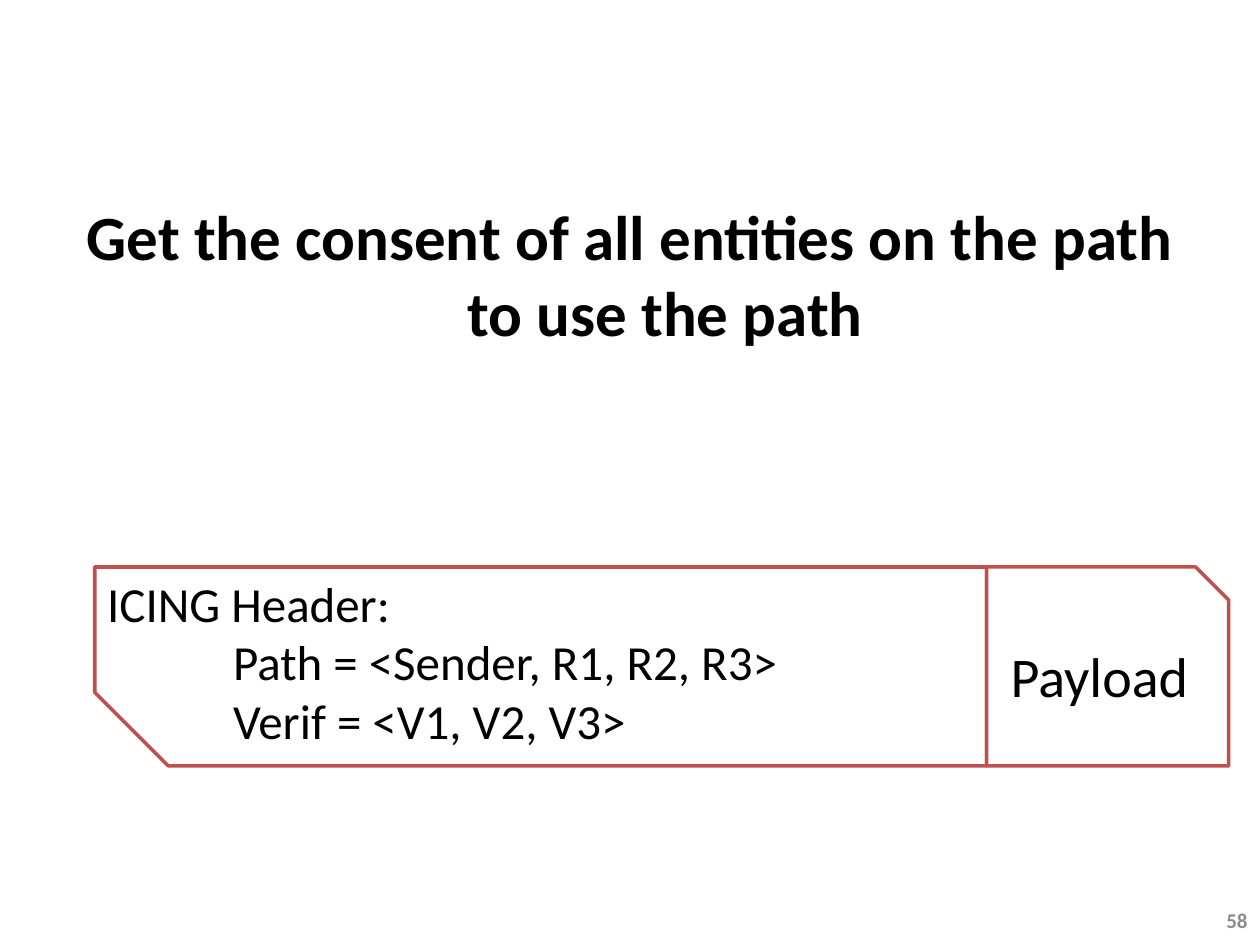
from dataclasses import dataclass

from pptx import Presentation
from pptx.dml.color import RGBColor
from pptx.enum.shapes import MSO_SHAPE
from pptx.enum.text import MSO_ANCHOR, MSO_AUTO_SIZE, PP_ALIGN
from pptx.util import Cm, Pt


@dataclass(frozen=True)
class Theme:
    font: str = "Calibri"
    text: str = "000000"
    muted: str = "8C8C8C"
    fill: str = "FFFFFF"
    outline: str = "C0504D"
    outline_width: float = 2
    title_size: int = 36
    payload_size: int = 32
    header_size: int = 28
    number_size: int = 12


class SlideBuilder:
    def __init__(self, slide, theme):
        self.slide = slide
        self.theme = theme

    def format_text(self, text_frame, size, color, bold=False, align=PP_ALIGN.LEFT):
        for paragraph in text_frame.paragraphs:
            paragraph.alignment = align
            for run in paragraph.runs:
                run.font.name = self.theme.font
                run.font.size = Pt(size)
                run.font.bold = bold
                run.font.color.rgb = RGBColor.from_string(color)

    def indent(self, paragraph, left, first_line=0):
        properties = paragraph._p.get_or_add_pPr()
        properties.set("marL", str(Cm(left)))
        properties.set("indent", str(Cm(first_line)))

    def title(self, text, left, top, width, height):
        title = self.slide.shapes.title
        title.left, title.top, title.width, title.height = map(Cm, (left, top, width, height))
        text_frame = title.text_frame
        text_frame.text = text
        text_frame.auto_size = MSO_AUTO_SIZE.NONE
        text_frame.vertical_anchor = MSO_ANCHOR.TOP
        self.format_text(text_frame, self.theme.title_size, self.theme.text, True, PP_ALIGN.CENTER)
        self.indent(text_frame.paragraphs[0], 1.42, -1.42)

    def text_box(self, lines, left, top, width, height, size, color,
                 bold=False, align=PP_ALIGN.LEFT, anchor=MSO_ANCHOR.TOP):
        box = self.slide.shapes.add_textbox(*map(Cm, (left, top, width, height)))
        text_frame = box.text_frame
        text_frame.word_wrap = True
        text_frame.vertical_anchor = anchor
        text_frame.text = "\n".join(lines)
        self.format_text(text_frame, size, color, bold, align)
        return text_frame

    def snipped_box(self, left, top, width, height, snip=None, rotation=0, text=""):
        shape = self.slide.shapes.add_shape(
            MSO_SHAPE.SNIP_1_RECTANGLE, *map(Cm, (left, top, width, height)))
        shape.shadow.inherit = False
        shape.rotation = rotation
        if snip is not None:
            shape.adjustments[0] = snip
        shape.fill.solid()
        shape.fill.fore_color.rgb = RGBColor.from_string(self.theme.fill)
        shape.line.color.rgb = RGBColor.from_string(self.theme.outline)
        shape.line.width = Pt(self.theme.outline_width)
        if text:
            shape.text_frame.text = text
            self.format_text(shape.text_frame, self.theme.payload_size,
                             self.theme.text, align=PP_ALIGN.CENTER)


def main():
    presentation = Presentation()
    presentation.slide_width, presentation.slide_height = Cm(25.4), Cm(19.05)
    theme = Theme()
    builder = SlideBuilder(presentation.slides.add_slide(presentation.slide_layouts[5]), theme)

    builder.title("Get the consent of all entities on the path to use the path",
                  1.27, 3.86, 22.86, 3.6)
    builder.text_box(["58"], 23.65, 18.03, 1.75, 1.02, theme.number_size, theme.muted,
                     bold=True, align=PP_ALIGN.RIGHT, anchor=MSO_ANCHOR.MIDDLE)

    packet_left, packet_top, packet_height = 1.91, 11.43, 4.01
    header_width, payload_width = 17.98, 4.88
    builder.snipped_box(packet_left, packet_top, header_width, packet_height,
                        snip=0.37, rotation=180)
    builder.snipped_box(packet_left + header_width, packet_top, payload_width, packet_height,
                        text="Payload")
    header = builder.text_box(
        ["ICING Header:", "Path = <Sender, R1, R2, R3>", "Verif = <V1, V2, V3>"],
        packet_left, packet_top, header_width, 3.84, theme.header_size, theme.text)
    for field in header.paragraphs[1:]:
        builder.indent(field, 2.54)

    presentation.save("out.pptx")


if __name__ == "__main__":
    main()
